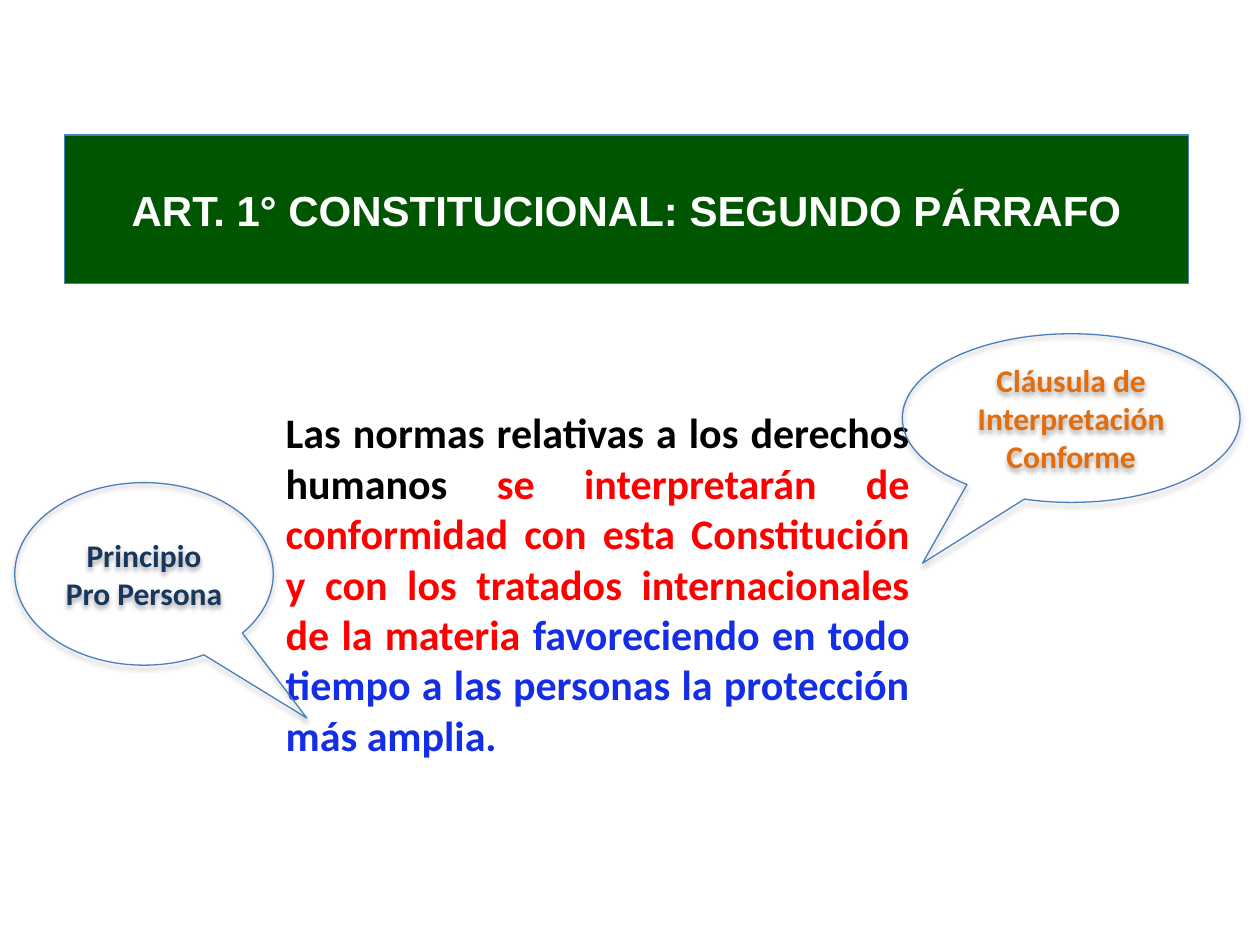
from lxml import etree
from pptx import Presentation
from pptx.dml.color import RGBColor
from pptx.enum.shapes import MSO_SHAPE
from pptx.enum.text import MSO_ANCHOR, PP_ALIGN
from pptx.oxml.ns import qn
from pptx.util import Cm, Pt

RECT, CALLOUT = MSO_SHAPE.RECTANGLE, MSO_SHAPE.OVAL_CALLOUT
MIDDLE = MSO_ANCHOR.MIDDLE
CENTER, JUSTIFY = PP_ALIGN.CENTER, PP_ALIGN.JUSTIFY

COLORS = {
    "banner": "005600", "outline": "4B7EBC", "white": "FFFFFF",
    "black": "000000", "red": "FF0000", "blue": "142DE6",
    "orange": "E46C0A", "navy": "17375E",
}

ARTICLE = [
    ("Las normas relativas a los derechos humanos ", "black"),
    ("se interpretarán de conformidad con esta Constitución "
     "y con los tratados internacionales de la materia ", "red"),
    ("favoreciendo en todo tiempo a las personas la protección más amplia.", "blue"),
]


def rgb(name):
    """Return the named colour."""
    return RGBColor.from_string(COLORS[name])


def set_font(p, size, face):
    """Set the bold font shared by all runs of a paragraph."""
    p.font.size, p.font.name, p.font.bold = Pt(size), face, True


def add_label(s, kind, box, text, color, size, face):
    """Add an outlined, unfilled shape with centred text."""
    sp = s.shapes.add_shape(kind, *map(Cm, box))
    sp.fill.background()
    sp.line.color.rgb = rgb("outline")
    sp.line.width = Pt(0.75)
    sp.shadow.inherit = False
    sp.text_frame.vertical_anchor = MIDDLE
    p = sp.text_frame.paragraphs[0]
    p.text, p.alignment = text, CENTER
    set_font(p, size, face)
    p.font.color.rgb = rgb(color)
    return sp


def add_banner(s, box, text):
    """Add the green title banner."""
    sp = add_label(s, RECT, box, text, "white", 24, "Arial")
    sp.fill.solid()
    sp.fill.fore_color.rgb = rgb("banner")


def add_callout(s, box, text, color, tail):
    """Add a speech bubble with a soft shadow and its tail at the given offset."""
    sp = add_label(s, CALLOUT, box, text, color, 18, "Calibri")
    sp.adjustments[0], sp.adjustments[1] = tail
    effects = sp._element.spPr.find(qn("a:effectLst"))
    shadow = etree.SubElement(effects, qn("a:outerShdw"), blurRad=str(Pt(3.1)),
                              dist=str(Pt(1.8)), dir="5400000", rotWithShape="0")
    clr = etree.SubElement(shadow, qn("a:srgbClr"), val=COLORS["black"])
    etree.SubElement(clr, qn("a:alpha"), val="35000")


def add_article(s, box, parts):
    """Add the justified paragraph with its coloured parts."""
    tf = s.shapes.add_textbox(*map(Cm, box)).text_frame
    tf.word_wrap = True
    p = tf.paragraphs[0]
    p.alignment = JUSTIFY
    set_font(p, 24, "Calibri")
    for text, color in parts:
        r = p.add_run()
        r.text = text
        r.font.color.rgb = rgb(color)


def main():
    """Build and save the slide."""
    prs = Presentation()
    prs.slide_width, prs.slide_height = Cm(25.4), Cm(19.05)
    s = prs.slides.add_slide(prs.slide_layouts[6])
    add_article(s, (5.51, 8.08, 13.08, 10.21), ARTICLE)
    add_callout(s, (18.19, 6.73, 6.81, 3.4), "Cláusula de Interpretación Conforme",
                "orange", (-0.44, 0.86))
    add_callout(s, (0.3, 9.73, 5.21, 3.68), "Principio Pro Persona",
                "navy", (0.63, 0.79))
    add_banner(s, (1.3, 2.72, 22.66, 3), "ART. 1° CONSTITUCIONAL: SEGUNDO PÁRRAFO")
    prs.save("out.pptx")


if __name__ == "__main__":
    main()
